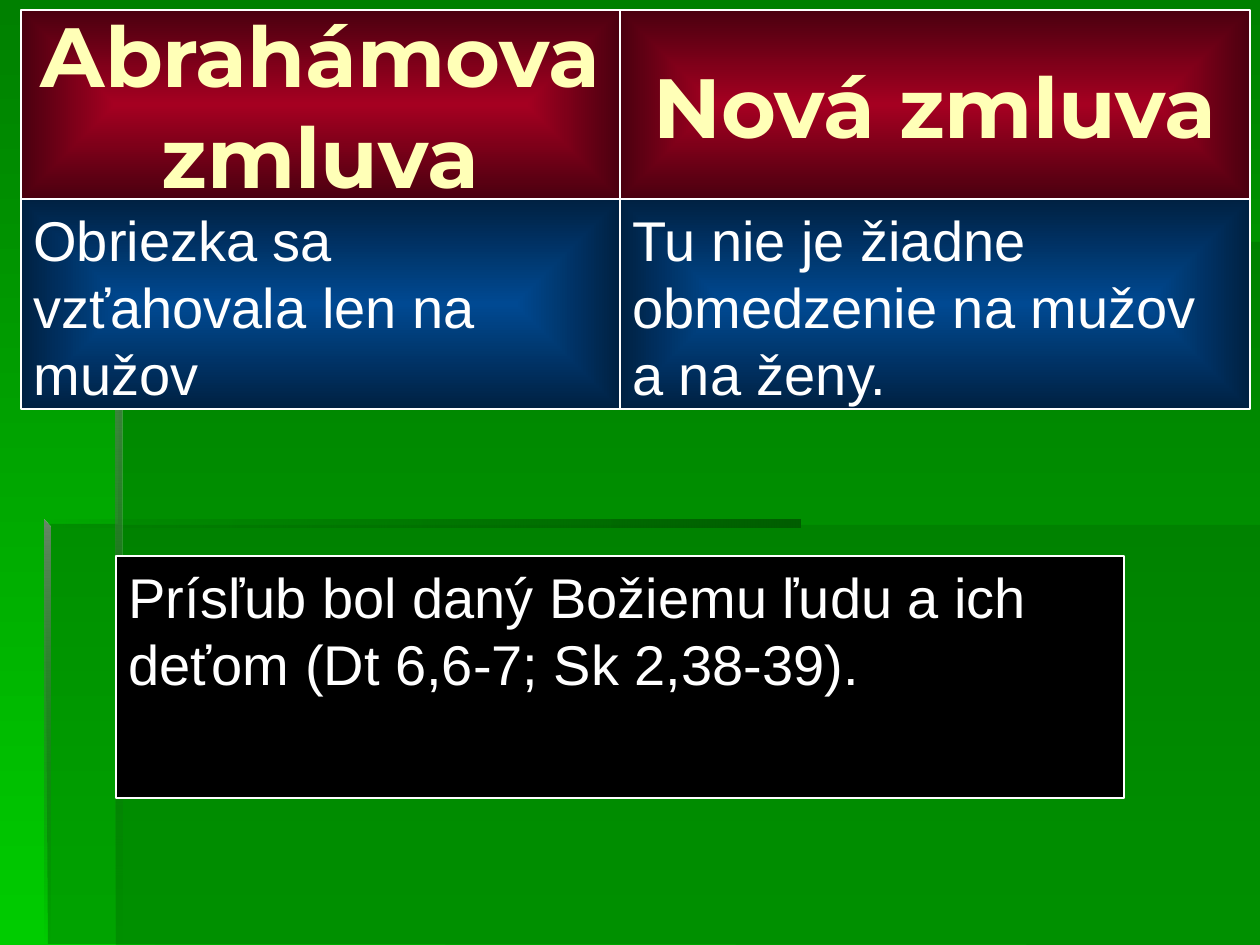
"""Build a slide comparing the Abrahamic covenant with the new covenant."""
from lxml.etree import SubElement
from pptx import Presentation
from pptx.dml.color import RGBColor
from pptx.enum.shapes import MSO_SHAPE
from pptx.enum.text import MSO_ANCHOR, MSO_AUTO_SIZE, PP_ALIGN
from pptx.oxml.ns import qn
from pptx.util import Pt

SCALE = 914400 / 126
WIDTH, HEIGHT = 1260, 945
COLORS = {
    "background": "008000", "glow": "00CC00", "panel": "006600",
    "bar": "005E00", "edge": "668666", "white": "FFFFFF", "black": "000000",
    "heading": "FFFFB7", "red": "A50021", "dark red": "4A000F",
    "blue": "004992", "dark blue": "002142",
}
ROWS = [
    ("Abrahámova zmluva", "Nová zmluva"),
    ("Obriezka sa vzťahovala len na mužov",
     "Tu nie je žiadne obmedzenie na mužov a na ženy."),
]
ROW_FILLS = [("red", "dark red"), ("blue", "dark blue")]
COLUMN_EDGES = [21, 620, 1250]
ROW_EDGES = [10, 199, 409]
PROMISE = "Prísľub bol daný Božiemu ľudu a ich deťom (Dt 6,6‑7; Sk 2,38‑39)."
PROMISE_BOX = (116, 556, 1008, 242)
PANELS = [
    ([(120, 242), (118, 524), (45, 524), (48, 944), (1260, 945), (1260, 242)], 40),
    ([(116, 525), (116, 945), (1260, 945), (1260, 525)], 30),
]
FADE_IN = [(0, "panel", 0), (100, "bar", 100)]
FADE_OUT = [(0, "edge", 100), (100, "panel", 0)]
BARS = [
    ([(44, 520), (44, 527), (800, 527), (800, 520)], FADE_IN, 0),
    ([(116, 242), (116, 248), (1186, 248), (1186, 242)], FADE_IN, 0),
    ([(44, 520), (44, 945), (50, 945), (50, 528)], FADE_OUT, 90),
    ([(116, 242), (116, 945), (122, 945), (121, 251)], FADE_OUT, 90),
]


def px(value):
    return round(value * SCALE)


def rgb(name):
    return RGBColor.from_string(COLORS[name])


def set_alpha(color, percent):
    SubElement(color, qn("a:alpha"), val=str(percent * 1000))


def set_gradient(fill, stops, angle=None):
    fill.gradient()
    gradient = fill._fill._gradFill
    for child in list(gradient):
        gradient.remove(child)
    stop_list = SubElement(gradient, qn("a:gsLst"))
    for position, name, opacity in stops:
        stop = SubElement(stop_list, qn("a:gs"), pos=str(position * 1000))
        color = SubElement(stop, qn("a:srgbClr"), val=COLORS[name])
        if opacity < 100:
            set_alpha(color, opacity)
    if angle is None:
        path = SubElement(gradient, qn("a:path"), path="rect")
        SubElement(path, qn("a:fillToRect"),
                   {side: "50000" for side in "ltrb"})
    else:
        SubElement(gradient, qn("a:lin"), ang=str(angle * 60000), scaled="0")


def add_outline(slide, points):
    builder = slide.shapes.build_freeform(*points[0], scale=SCALE)
    builder.add_line_segments(points[1:], close=True)
    shape = builder.convert_to_shape()
    shape.shadow.inherit = False
    shape.line.fill.background()
    return shape


def write_text(shape, text, heading=False):
    shape.line.color.rgb = rgb("white")
    shape.line.width = Pt(0.75)
    frame = shape.text_frame
    frame.text = text
    frame.word_wrap = True
    frame.auto_size = MSO_AUTO_SIZE.NONE
    frame.vertical_anchor = MSO_ANCHOR.MIDDLE if heading else MSO_ANCHOR.TOP
    paragraph = frame.paragraphs[0]
    paragraph.alignment = PP_ALIGN.CENTER if heading else PP_ALIGN.LEFT
    paragraph.space_before = Pt(0 if heading else 6.4)
    font = paragraph.runs[0].font
    font.name = "Montserrat" if heading else "Arial"
    font.size = Pt(48 if heading else 32)
    font.bold = heading
    font.color.rgb = rgb("heading" if heading else "white")


def add_cell(slide, row, column):
    left, right = COLUMN_EDGES[column:column + 2]
    top, bottom = ROW_EDGES[row:row + 2]
    shape = slide.shapes.add_shape(MSO_SHAPE.RECTANGLE, px(left), px(top),
                                   px(right - left), px(bottom - top))
    shape.shadow.inherit = False
    inner, outer = ROW_FILLS[row]
    set_gradient(shape.fill, [(0, inner, 100), (100, outer, 100)])
    write_text(shape, ROWS[row][column], heading=row == 0)


def main():
    presentation = Presentation()
    presentation.slide_width, presentation.slide_height = px(WIDTH), px(HEIGHT)
    slide = presentation.slides.add_slide(presentation.slide_layouts[0])
    title, promise = slide.placeholders
    title.element.getparent().remove(title.element)
    set_gradient(slide.background.fill,
                 [(0, "background", 100), (100, "glow", 100)], 90)

    for points, opacity in PANELS:
        panel = add_outline(slide, points)
        panel.fill.solid()
        panel.fill.fore_color.rgb = rgb("panel")
        set_alpha(panel.fill._xPr.find(qn("a:solidFill"))[0], opacity)
    for points, stops, angle in BARS:
        set_gradient(add_outline(slide, points).fill, stops, angle)
    for row in range(len(ROWS)):
        for column in range(len(ROWS[row])):
            add_cell(slide, row, column)

    promise.left, promise.top, promise.width, promise.height = map(px, PROMISE_BOX)
    promise.fill.solid()
    promise.fill.fore_color.rgb = rgb("black")
    write_text(promise, PROMISE)
    slide.shapes._spTree.append(promise.element)
    presentation.save("out.pptx")


if __name__ == "__main__":
    main()
